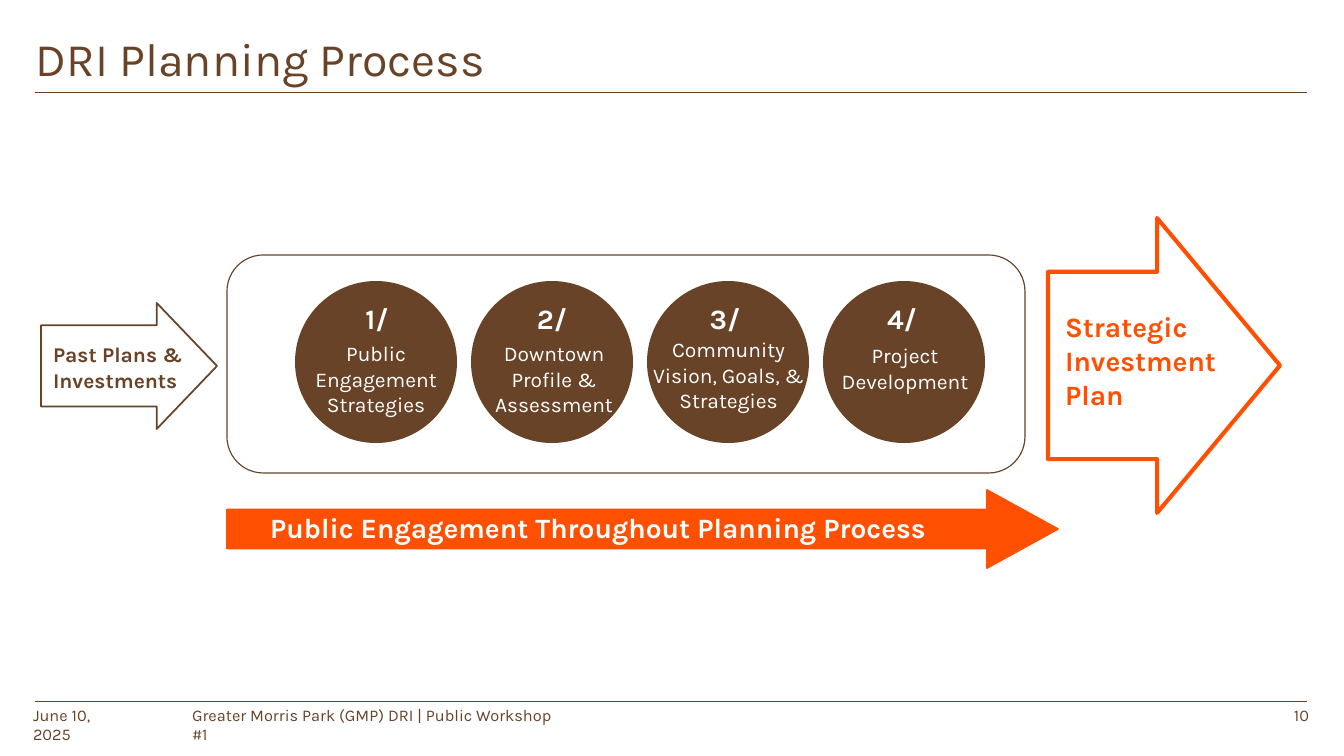
from lxml.etree import SubElement
from pptx import Presentation
from pptx.dml.color import RGBColor
from pptx.enum.shapes import MSO_CONNECTOR, MSO_SHAPE
from pptx.enum.text import PP_ALIGN
from pptx.oxml.ns import qn
from pptx.util import Pt

PX = 914400 / 84
COLORS = {"brown": "684328", "orange": "FF4F00", "white": "FFFFFF"}
FONT = "Karla"

# Text formats: font size, bold, color, alignment, side and top insets in px
FORMATS = {
    "title": (40, False, "brown", PP_ALIGN.LEFT, 8, 4),
    "footer": (14, False, "brown", PP_ALIGN.LEFT, 4, 4),
    "page number": (14, False, "brown", PP_ALIGN.RIGHT, 8, 4),
    "step number": (24, True, "white", PP_ALIGN.CENTER, 7, 3),
    "step label": (18, False, "white", PP_ALIGN.CENTER, 7, 3),
    "input": (18, True, "brown", PP_ALIGN.LEFT, 7, 3),
    "outcome": (24, True, "orange", PP_ALIGN.LEFT, 7, 3),
    "banner": (24, True, "white", PP_ALIGN.CENTER, 7, 3),
}

# Places are left, top, width, height in px
TEXTS = [
    ("title", (28, 26, 1084, 65), ["DRI Planning Process"]),
    ("footer", (29, 701, 106, 29), ["June 10, 2025"]),
    ("footer", (188, 701, 381, 29), ["Greater Morris Park (GMP) DRI | Public Workshop #1"]),
    ("page number", (1233, 701, 84, 29), ["10"]),
    ("input", (46, 339, 147, 58), ["Past Plans & Investments"]),
    ("outcome", (1058, 307, 181, 109), ["Strategic Investment", "Plan"]),
    ("banner", (194, 508, 808, 41), ["Public Engagement Throughout Planning Process"]),
]

# Number left, label place, label
STEPS = [
    (303, (302, 338, 148, 83), "Public Engagement Strategies"),
    (478, (480, 338, 148, 83), "Downtown Profile & Assessment"),
    (651, (643, 334, 171, 83), "Community Vision, Goals, & Strategies"),
    (828, (831, 340, 148, 58), "Project Development"),
]
CIRCLE_LEFT, CIRCLE_TOP, CIRCLE_SIZE, CIRCLE_STEP = 295, 281, 162, 176
NUMBER_TOP, NUMBER_WIDTH, NUMBER_HEIGHT = 299, 148, 41

FRAME = (227, 255, 798, 218)
# Place, adjustments, fill, line color, line width in points
ARROWS = [
    ((41, 303, 176, 126), (0.645, 0.478), None, "brown", 1.5),
    ((1048, 218, 232, 295), (0.635, 0.53), None, "orange", 3.5),
    ((227, 490, 831, 78), (0.5, 0.91), "orange", "orange", 1.5),
]
RULE_LEFT, RULE_RIGHT = 35, 1307
RULE_TOPS = [92, 701]


def emu(place):
    return [round(length * PX) for length in place]


def color(name):
    return RGBColor.from_string(COLORS[name])


def add_figure(slide, kind, place, fill=None, line=None, width=1, adjustments=()):
    shape = slide.shapes.add_shape(kind, *emu(place))
    shape.shadow.inherit = False
    for index, value in enumerate(adjustments):
        shape.adjustments[index] = value
    if fill:
        shape.fill.solid()
        shape.fill.fore_color.rgb = color(fill)
    else:
        shape.fill.background()
    if line:
        shape.line.color.rgb = color(line)
        shape.line.width = Pt(width)
    else:
        shape.line.fill.background()


def add_text(slide, style, place, lines):
    size, bold, ink, alignment, side, top = FORMATS[style]
    frame = slide.shapes.add_textbox(*emu(place)).text_frame
    side, top = emu((side, top))
    settings = {"word_wrap": True, "margin_left": side, "margin_right": side,
                "margin_top": top, "margin_bottom": top}
    for name, value in settings.items():
        setattr(frame, name, value)
    for index, line in enumerate(lines):
        para = frame.add_paragraph() if index else frame.paragraphs[0]
        para.alignment = alignment
        span = para.add_run()
        span.text = line
        for name, value in {"name": FONT, "size": Pt(size), "bold": bold}.items():
            setattr(span.font, name, value)
        span.font.color.rgb = color(ink)


def add_rule(slide, top):
    rule = slide.shapes.add_connector(
        MSO_CONNECTOR.STRAIGHT, *emu((RULE_LEFT, top, RULE_RIGHT, top)))
    rule.line.color.rgb = color("brown")
    rule.line.width = Pt(0.75)
    SubElement(rule._element.spPr, qn("a:effectLst"))


def main():
    deck = Presentation()
    deck.slide_width, deck.slide_height = emu((1344, 756))
    page = deck.slides.add_slide(deck.slide_layouts[6])

    for top in RULE_TOPS:
        add_rule(page, top)
    add_figure(page, MSO_SHAPE.ROUNDED_RECTANGLE, FRAME, "white", "brown")
    for index, (number_left, label_place, label) in enumerate(STEPS):
        left = CIRCLE_LEFT + index * CIRCLE_STEP
        add_figure(page, MSO_SHAPE.OVAL, (left, CIRCLE_TOP, CIRCLE_SIZE, CIRCLE_SIZE), "brown")
        number_place = (number_left, NUMBER_TOP, NUMBER_WIDTH, NUMBER_HEIGHT)
        add_text(page, "step number", number_place, [f"{index + 1}/"])
        add_text(page, "step label", label_place, [label])
    for place, adjustments, fill, line, width in ARROWS:
        add_figure(page, MSO_SHAPE.RIGHT_ARROW, place, fill, line, width, adjustments)
    for style, place, lines in TEXTS:
        add_text(page, style, place, lines)

    deck.save("out.pptx")


if __name__ == "__main__":
    main()
